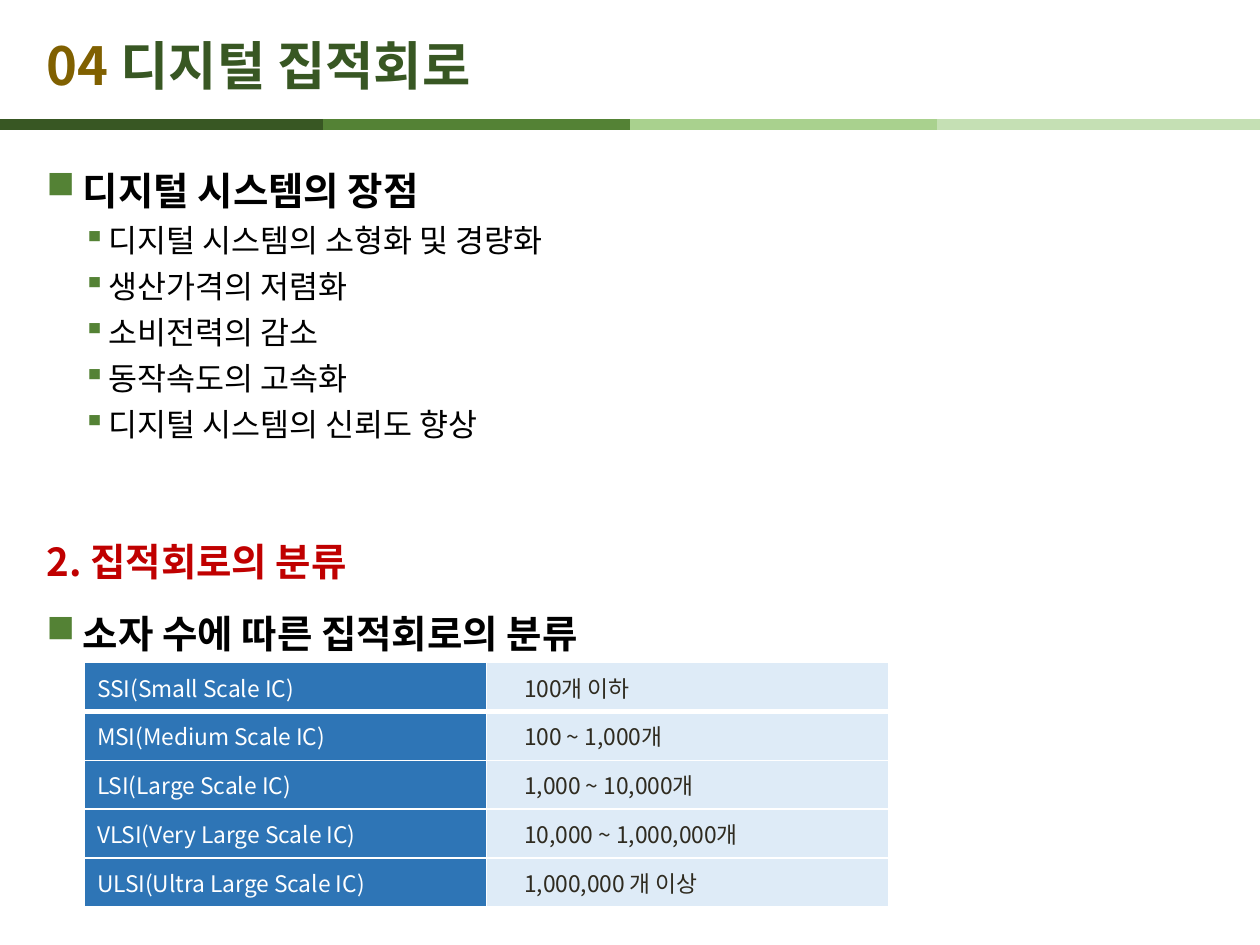
import dataclasses

import lxml.etree
import pptx
import pptx.dml.color
import pptx.enum.shapes
import pptx.enum.text
import pptx.oxml.ns
import pptx.util

Pt = pptx.util.Pt
RGB = pptx.dml.color.RGBColor.from_string
qn = pptx.oxml.ns.qn
MIDDLE = pptx.enum.text.MSO_ANCHOR.MIDDLE
LEFT = pptx.enum.text.PP_ALIGN.LEFT


@dataclasses.dataclass(frozen=True)
class Theme:
    """Colours, font and type sizes of the slide."""
    font: str = "Noto Sans CJK KR"
    number: str = "806000"
    title: str = "385723"
    bullet: str = "548235"
    text: str = "000000"
    section: str = "C00000"
    white: str = "FFFFFF"
    label_fill: str = "2E75B6"
    value_fill: str = "DEEBF7"
    value_text: str = "2F2B20"
    bars: tuple = ("385723", "548235", "A9D18E", "C5E0B4")
    title_size: int = 30
    heading_size: int = 22
    item_size: int = 18
    cell_size: int = 13


THEME = Theme()

HEADING = {"line_spacing": Pt(40), "space_before": Pt(0), "space_after": Pt(1)}
ITEM = {"line_spacing": Pt(21.7), "space_before": Pt(3.6), "space_after": Pt(1), "level": 1}
CELL = {"space_after": Pt(6)}

ADVANTAGES = [
    "디지털 시스템의 소형화 및 경량화",
    "생산가격의 저렴화",
    "소비전력의 감소",
    "동작속도의 고속화",
    "디지털 시스템의 신뢰도 향상",
]
SCALES = [
    ("SSI(Small Scale IC)", "100개 이하"),
    ("MSI(Medium Scale IC)", "100 ~ 1,000개"),
    ("LSI(Large Scale IC)", "1,000 ~ 10,000개"),
    ("VLSI(Very Large Scale IC)", "10,000 ~ 1,000,000개"),
    ("ULSI(Ultra Large Scale IC)", "1,000,000 개 이상"),
]


def apply(obj, values):
    """Set each named attribute of an object."""
    for name, value in values.items():
        setattr(obj, name, value)


def add_run(p, text, size, color, bold=False):
    """Append a formatted run to a paragraph."""
    r = p.add_run()
    r.text = text
    apply(r.font, {"name": THEME.font, "size": Pt(size), "bold": bold})
    r.font.color.rgb = RGB(color)
    ea = lxml.etree.SubElement(r.font._element, qn("a:ea"))
    ea.set("typeface", THEME.font)


def set_indent(p, margin, indent):
    """Set the left margin and first-line indent of a paragraph."""
    pPr = p._p.get_or_add_pPr()
    pPr.set("marL", str(Pt(margin)))
    pPr.set("indent", str(Pt(indent)))
    return pPr


def set_bullet(p, char, margin, hanging):
    """Give a paragraph a coloured hanging bullet."""
    pPr = set_indent(p, margin, -hanging)
    clr = lxml.etree.SubElement(pPr, qn("a:buClr"))
    lxml.etree.SubElement(clr, qn("a:srgbClr")).set("val", THEME.bullet)
    lxml.etree.SubElement(pPr, qn("a:buChar")).set("char", char)


def add_bar(s, x, color):
    """Draw one segment of the rule below the title."""
    y = Pt(71.28)
    sp = s.shapes.add_connector(pptx.enum.shapes.MSO_CONNECTOR.STRAIGHT, Pt(x), y, Pt(x + 184.32), y)
    sp.line.width = Pt(6)
    sp.line.color.rgb = RGB(color)
    lxml.etree.SubElement(sp._element.spPr, qn("a:effectLst"))


def add_title(s):
    """Place and fill the title placeholder."""
    sp = s.shapes.title
    apply(sp, {"left": Pt(19.44), "top": Pt(15.12), "width": Pt(595.44), "height": Pt(43.2)})
    tf = sp.text_frame
    apply(tf, {"vertical_anchor": MIDDLE, "word_wrap": True,
               "auto_size": pptx.enum.text.MSO_AUTO_SIZE.NONE})
    p = tf.paragraphs[0]
    p.alignment = LEFT
    add_run(p, "04 ", THEME.title_size, THEME.number, True)
    add_run(p, "디지털 집적회로", THEME.title_size, THEME.title, True)


def add_heading(p, text):
    """Fill a paragraph as a square-bulleted heading."""
    set_bullet(p, "■", 20.88, 20.88)
    apply(p, HEADING)
    add_run(p, text, THEME.heading_size, THEME.text, True)


def add_body(s):
    """Add the body text with its headings and list."""
    tf = s.shapes.add_textbox(Pt(19.44), Pt(78), Pt(680.4), Pt(430)).text_frame
    tf.word_wrap = True
    add_heading(tf.paragraphs[0], "디지털 시스템의 장점")
    for text in ADVANTAGES:
        p = tf.add_paragraph()
        set_bullet(p, "▪", 35.28, 14.4)
        apply(p, ITEM)
        add_run(p, text, THEME.item_size, THEME.text)
    p = tf.add_paragraph()
    apply(p, HEADING | {"space_before": Pt(40)})
    add_run(p, "2. 집적회로의 분류", THEME.heading_size, THEME.section, True)
    add_heading(tf.add_paragraph(), "소자 수에 따른 집적회로의 분류")


def set_borders(cell, widths):
    """Draw white borders on a cell from a dict of side widths."""
    tcPr = cell._tc.get_or_add_tcPr()
    for i, (side, width) in enumerate(widths.items()):
        ln = lxml.etree.Element(qn("a:ln" + side), w=str(Pt(width)))
        fill = lxml.etree.SubElement(ln, qn("a:solidFill"))
        lxml.etree.SubElement(fill, qn("a:srgbClr")).set("val", THEME.white)
        tcPr.insert(i, ln)


def fill_cell(cell, text, fill, color, indent, widths):
    """Write and format one table cell."""
    cell.vertical_anchor = MIDDLE
    cell.fill.solid()
    cell.fill.fore_color.rgb = RGB(fill)
    set_borders(cell, widths)
    p = cell.text_frame.paragraphs[0]
    set_indent(p, 0, indent)
    apply(p, CELL)
    add_run(p, text, THEME.cell_size, color)


def add_scale_table(s):
    """Add the table of circuit scales."""
    table = s.shapes.add_table(len(SCALES), 2, Pt(48.24), Pt(378.72), Pt(459.36), Pt(139.5)).table
    apply(table, {"first_row": False, "horz_banding": False})
    styles = [(THEME.label_fill, THEME.white, 0), (THEME.value_fill, THEME.value_text, 14.4)]
    for i, row in enumerate(SCALES):
        widths = {"L": 1, "R": 1, "T": 3 if i == 1 else 1, "B": 3 if i == 0 else 1}
        for j, (text, style) in enumerate(zip(row, styles)):
            fill_cell(table.cell(i, j), text, *style, widths)


def main():
    """Build the slide and save it."""
    prs = pptx.Presentation()
    apply(prs, {"slide_width": Pt(720), "slide_height": Pt(540)})
    s = prs.slides.add_slide(prs.slide_layouts[5])
    for x, color in zip((0, 184.32, 360, 535.68), THEME.bars):
        add_bar(s, x, color)
    add_title(s)
    add_body(s)
    add_scale_table(s)
    prs.save("out.pptx")


if __name__ == "__main__":
    main()
